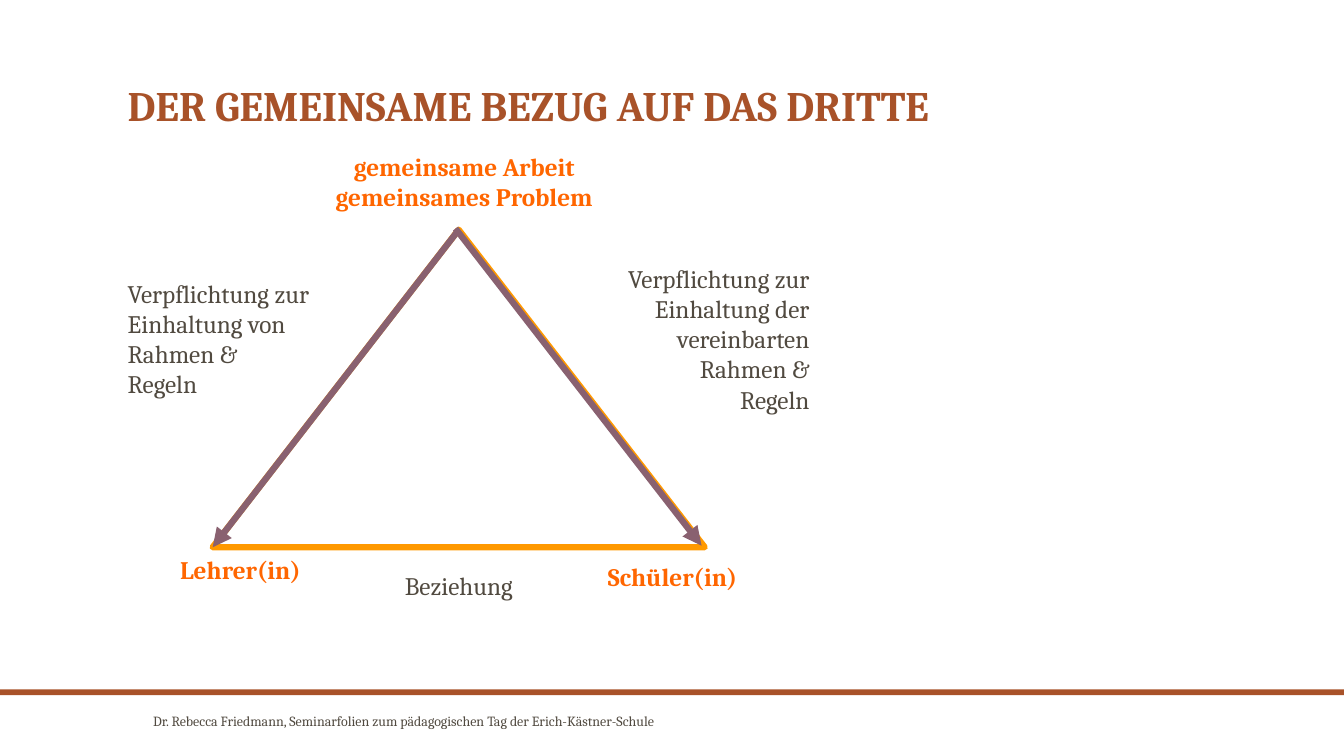
import pptx
import pptx.util
import pptx.dml.color
import pptx.enum.shapes
import pptx.enum.text
import pptx.oxml
from pptx.oxml import ns

Cm, Pt = pptx.util.Cm, pptx.util.Pt
RGBColor = pptx.dml.color.RGBColor
Shapes = pptx.enum.shapes.MSO_SHAPE
Align = pptx.enum.text.PP_ALIGN
Anchor = pptx.enum.text.MSO_ANCHOR

RUST = RGBColor(0xA8, 0x52, 0x29)
AMBER = RGBColor(0xFF, 0x99, 0x00)
ORANGE = RGBColor(0xFF, 0x66, 0x00)
MAUVE = RGBColor(0x89, 0x61, 0x70)
BROWN = RGBColor(0x51, 0x4A, 0x40)

PAGE_WIDTH, PAGE_HEIGHT = 33.87, 19.05


def add_text(page, box, lines, size=18, color=BROWN, bold=False,
             align=Align.LEFT, anchor=Anchor.TOP, spacing=None):
    left, top, width, height = box
    frame = page.shapes.add_textbox(Cm(left), Cm(top), Cm(width), Cm(height)).text_frame
    frame.word_wrap = True
    frame.vertical_anchor = anchor
    for index, line in enumerate(lines):
        para = frame.paragraphs[0] if index == 0 else frame.add_paragraph()
        para.alignment = align
        if spacing:
            para.line_spacing = spacing
        span = para.add_run()
        span.text = line
        span.font.name = "Cambria"
        span.font.size = Pt(size)
        span.font.bold = bold
        span.font.color.rgb = color


def add_arrow(page, start, end):
    arrow = page.shapes.add_connector(
        pptx.enum.shapes.MSO_CONNECTOR.STRAIGHT,
        Cm(start[0]), Cm(start[1]), Cm(end[0]), Cm(end[1]))
    arrow.line.color.rgb = MAUVE
    arrow.line.width = Pt(4.5)
    head = pptx.oxml.parse_xml(f'<a:tailEnd {ns.nsdecls("a")} type="triangle"/>')
    arrow.line._get_or_add_ln().append(head)
    arrow._element.spPr.append(pptx.oxml.parse_xml(f'<a:effectLst {ns.nsdecls("a")}/>'))


def add_title(page, box):
    add_text(page, box, ["DER GEMEINSAME BEZUG AUF DAS DRITTE"], size=30,
             color=RUST, bold=True, anchor=Anchor.BOTTOM, spacing=0.9)


def add_triangle_diagram(page, box):
    left, top, width, height = box

    # Triangle outline
    triangle = page.shapes.add_shape(
        Shapes.ISOSCELES_TRIANGLE, Cm(left), Cm(top), Cm(width), Cm(height))
    triangle.shadow.inherit = False
    triangle.fill.background()
    triangle.line.color.rgb = AMBER
    triangle.line.width = Pt(4.5)

    # Arrows from the apex down both sides
    apex = left + width / 2
    add_arrow(page, (apex, top), (left, top + height))
    add_arrow(page, (apex - 0.08, top - 0.03), (left + width - 0.08, top + height - 0.04))

    # Corner labels
    corners = [
        (-3.3, 8.05, 1.03, ["Lehrer(in)"]),
        (7.59, 8.23, 1.03, ["Schüler(in)"]),
        (2.34, -2.11, 1.8, ["gemeinsame Arbeit", "gemeinsames Problem"]),
    ]
    for across, down, tall, lines in corners:
        add_text(page, (left + across, top + down, 8, tall), lines,
                 color=ORANGE, bold=True, align=Align.CENTER)

    # Side labels
    sides = [
        (-2.39, 1.09, 3.33, Align.LEFT,
         ["Verpflichtung zur Einhaltung von Rahmen &", "Regeln"]),
        (9.58, 0.71, 4.11, Align.RIGHT,
         ["Verpflichtung zur Einhaltung der vereinbarten Rahmen &", "Regeln"]),
        (3.35, 8.46, 1.03, Align.CENTER, ["Beziehung"]),
    ]
    for across, down, tall, align, lines in sides:
        add_text(page, (left + across, top + down, 5.71, tall), lines, align=align)


def add_footer(page, box):
    left, top, width, height = box
    bar = page.shapes.add_shape(Shapes.RECTANGLE, Cm(left), Cm(top), Cm(width), Cm(0.15))
    bar.shadow.inherit = False
    bar.fill.solid()
    bar.fill.fore_color.rgb = RUST
    bar.line.fill.background()
    add_text(page, (left + 3.61, top + 0.46, 14.4, 0.66),
             ["Dr. Rebecca Friedmann, Seminarfolien zum pädagogischen Tag der Erich-Kästner-Schule"],
             size=10, anchor=Anchor.MIDDLE)


def main():
    deck = pptx.Presentation()
    deck.slide_width, deck.slide_height = Cm(PAGE_WIDTH), Cm(PAGE_HEIGHT)
    page = deck.slides.add_slide(deck.slide_layouts[6])
    add_footer(page, (0, 17.37, PAGE_WIDTH, 1.68))
    add_title(page, (2.97, 1.4, 23.19, 2.01))
    add_triangle_diagram(page, (5.36, 5.79, 12.4, 8))
    deck.save("out.pptx")


if __name__ == "__main__":
    main()
